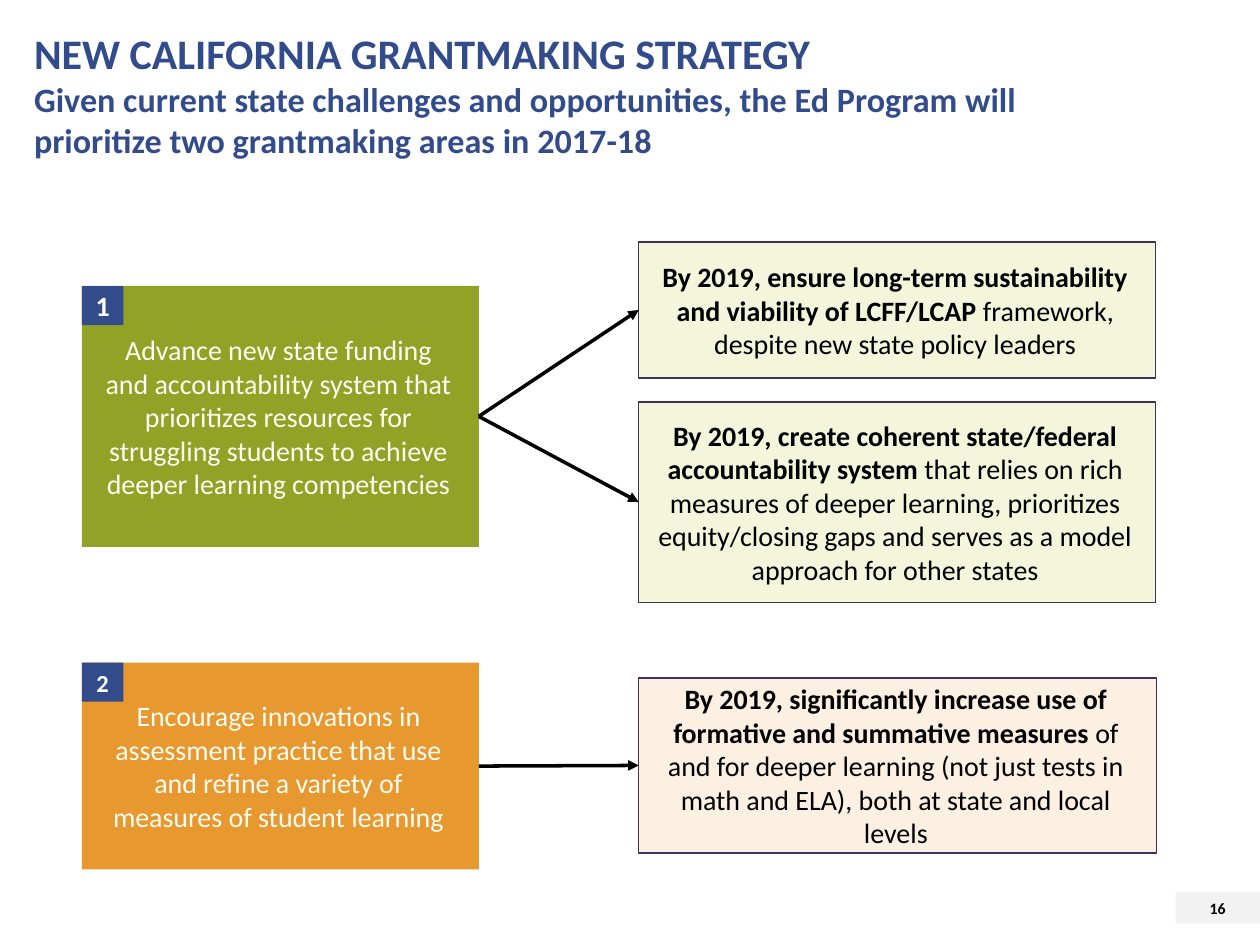
from lxml import etree
from pptx import Presentation
from pptx.dml.color import RGBColor
from pptx.enum.shapes import MSO_CONNECTOR, MSO_SHAPE
from pptx.enum.text import MSO_ANCHOR, PP_ALIGN
from pptx.oxml.ns import qn
from pptx.util import Inches, Pt

NAVY = RGBColor(0x32, 0x4B, 0x8B)
GREEN = RGBColor(0x91, 0xA2, 0x26)
ORANGE = RGBColor(0xE7, 0x98, 0x2E)
PALE_GREEN = RGBColor(0xEE, 0xF3, 0xCD)
PALE_ORANGE = RGBColor(0xFA, 0xEA, 0xD5)
OUTLINE = RGBColor(0x3B, 0x32, 0x5E)
CREAM = RGBColor(0xFE, 0xFC, 0xF3)
GRAY = RGBColor(0xF2, 0xF2, 0xF2)
WHITE = RGBColor(0xFF, 0xFF, 0xFF)
BLACK = RGBColor(0, 0, 0)

AREA_LEFT, AREA_WIDTH, GOAL_LEFT = 0.65, 3.15, 5.07

AREAS = [
    ("1", 16, 2.27, 2.07, GREEN, PALE_GREEN,
     "Advance new state funding and accountability system that prioritizes "
     "resources for struggling students to achieve deeper learning competencies",
     [(1.92, 4.1, 1.08,
       "By 2019, ensure long-term sustainability and viability of LCFF/LCAP ",
       "framework, despite new state policy leaders"),
      (3.19, 4.1, 1.59,
       "By 2019, create coherent state/federal accountability system ",
       "that relies on rich measures of deeper learning, prioritizes "
       "equity/closing gaps and serves as a model approach for other states")]),
    ("2", 14, 5.26, 1.64, ORANGE, PALE_ORANGE,
     "Encourage innovations in assessment practice that use and refine "
     "a variety of measures of student learning",
     [(5.38, 4.11, 1.39,
       "By 2019, significantly increase use of formative and summative measures ",
       "of and for deeper learning (not just tests in math and ELA), "
       "both at state and local levels")]),
]


def add_box(left, top, width, height, fill, spans, size, color):
    box = page.shapes.add_shape(MSO_SHAPE.RECTANGLE, Inches(left), Inches(top),
                                Inches(width), Inches(height))
    box.shadow.inherit = False
    box.fill.solid()
    box.fill.fore_color.rgb = fill
    box.line.fill.background()
    frame = box.text_frame
    frame.word_wrap = True
    frame.vertical_anchor = MSO_ANCHOR.MIDDLE
    para = frame.paragraphs[0]
    para.alignment = PP_ALIGN.CENTER
    para.font.name = "Calibri"
    para.font.size = Pt(size)
    para.font.color.rgb = color
    for text, bold in spans:
        span = para.add_run()
        span.text = text
        span.font.bold = bold
    return box


def set_wide_margins(box):
    frame = box.text_frame
    frame.margin_left = Inches(0.15)
    frame.margin_right = Inches(0.18)
    frame.margin_top = frame.margin_bottom = Inches(0.09)


deck = Presentation()
deck.slide_width = Inches(10)
deck.slide_height = Inches(7.5)
page = deck.slides.add_slide(deck.slide_layouts[5])

title = page.shapes.title
title.left, title.top = Inches(0.17), Inches(0.17)
title.width, title.height = Inches(9), Inches(1.08)
title.text_frame.vertical_anchor = MSO_ANCHOR.TOP
title.text_frame.word_wrap = True
para = title.text_frame.paragraphs[0]
para.alignment = PP_ALIGN.LEFT
para.font.name = "Calibri"
para.font.bold = True
para.font.color.rgb = NAVY
span = para.add_run()
span.text = "NEW CALIFORNIA GRANTMAKING STRATEGY"
span.font.size = Pt(24)
para.add_line_break()
span = para.add_run()
span.text = ("Given current state challenges and opportunities, the Ed Program will "
             "prioritize two grantmaking areas in 2017-18")
span.font.size = Pt(19.5)

for number, number_size, top, height, fill, goal_fill, text, goals in AREAS:
    area = add_box(AREA_LEFT, top, AREA_WIDTH, height, fill, [(text, False)], 16, CREAM)
    set_wide_margins(area)
    add_box(AREA_LEFT, top, 0.33, 0.31, NAVY, [(number, True)], number_size, WHITE)
    for goal_top, goal_width, goal_height, lead, rest in goals:
        goal = add_box(GOAL_LEFT, goal_top, goal_width, goal_height, goal_fill,
                       [(lead, True), (rest, False)], 16, BLACK)
        set_wide_margins(goal)
        goal.line.color.rgb = OUTLINE
        goal.line.width = Pt(0.75)
        fill_color = goal.fill._xPr.find(qn("a:solidFill"))[0]
        etree.SubElement(fill_color, qn("a:alpha"), val="70000")

        arrow = page.shapes.add_connector(MSO_CONNECTOR.STRAIGHT, 0, 0, 0, 0)
        arrow.begin_connect(area, 3)
        arrow.end_connect(goal, 1)
        arrow.line.color.rgb = BLACK
        arrow.line.width = Pt(2)
        etree.SubElement(arrow.line._get_or_add_ln(), qn("a:tailEnd"), type="triangle")
        etree.SubElement(arrow._element.spPr, qn("a:effectLst"))

add_box(9.33, 7.08, 0.67, 0.25, GRAY, [("16", True)], 9, BLACK)

deck.save("out.pptx")
